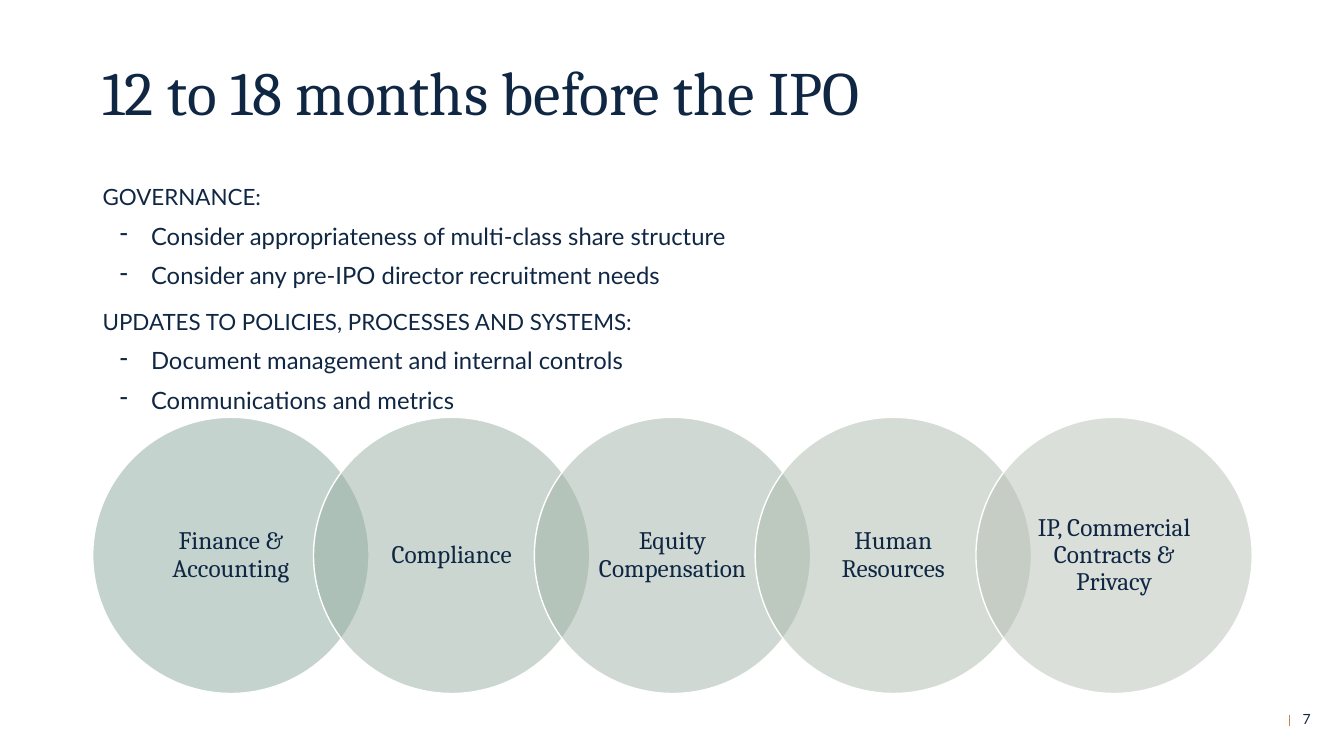
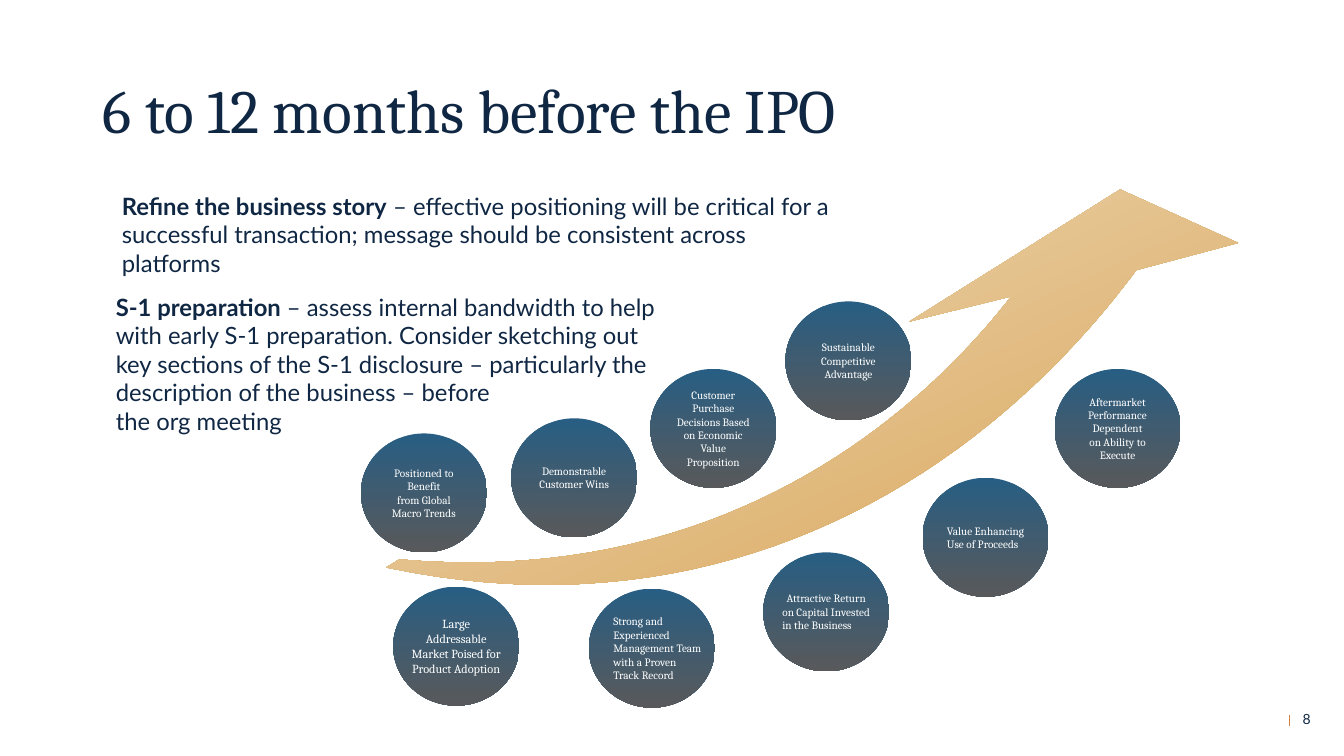
from lxml import etree
from pptx import Presentation
from pptx.dml.color import RGBColor
from pptx.enum.shapes import MSO_CONNECTOR, MSO_SHAPE
from pptx.enum.text import MSO_ANCHOR, PP_ALIGN
from pptx.oxml.ns import qn
from pptx.util import Inches, Pt

LINE = MSO_CONNECTOR.STRAIGHT
OVAL = MSO_SHAPE.OVAL
TOP, MIDDLE = MSO_ANCHOR.TOP, MSO_ANCHOR.MIDDLE
LEFT, CENTER = PP_ALIGN.LEFT, PP_ALIGN.CENTER

SERIF, SANS = "Cambria", "Lato"
NAVY = RGBColor(0x10, 0x27, 0x44)
WHITE = RGBColor(0xFF, 0xFF, 0xFF)
ORANGE = RGBColor(0xD1, 0x83, 0x46)
BLUE = RGBColor(0x28, 0x5E, 0x83)
GRAY = RGBColor(0x58, 0x59, 0x5B)
GOLD = RGBColor(0xD8, 0xA5, 0x58)
SAND = RGBColor(0xEF, 0xDB, 0xBC)
SAGES = [RGBColor(0x8B, 0xA8, 0x9E), RGBColor(0x96, 0xAE, 0xA1),
         RGBColor(0xA1, 0xB3, 0xA6), RGBColor(0xAC, 0xBA, 0xAD),
         RGBColor(0xB7, 0xC0, 0xB6)]

EDGE = 0.92  # left margin of titles and content

AREAS = ["Finance & Accounting", "Compliance", "Equity Compensation",
         "Human Resources", "IP, Commercial Contracts & Privacy"]

TOPICS = [
    ("GOVERNANCE:",
     ["Consider appropriateness of multi-class share structure",
      "Consider any pre-IPO director recruitment needs"]),
    ("UPDATES TO POLICIES, PROCESSES AND SYSTEMS:",
     ["Document management and internal controls",
      "Communications and metrics"]),
]

# left, top, text size, number of leading centred lines, lines
POINTS = [
    (3.58, 4.3, 8, 4,
     ["Positioned to", "Benefit", "from Global", "Macro Trends"]),
    (5.07, 4.15, 8, 2, ["Demonstrable", "Customer Wins"]),
    (6.45, 3.66, 8, 6,
     ["Customer", "Purchase", "Decisions Based", "on Economic", "Value",
      "Proposition"]),
    (7.79, 2.99, 8, 3, ["Sustainable", "Competitive", "Advantage"]),
    (3.9, 5.82, 8.8, 4,
     ["Large", "Addressable", "Market Poised for", "Product Adoption"]),
    (5.84, 5.84, 8, 0,
     ["Strong and", "Experienced", "Management Team", "with a Proven",
      "Track Record"]),
    (7.57, 5.48, 8, 1,
     ["Attractive Return", "on Capital Invested", "in the Business"]),
    (9.15, 4.74, 8, 1, ["Value Enhancing", "Use of Proceeds"]),
    (10.46, 3.66, 8, 5,
     ["Aftermarket", "Performance", "Dependent", "on Ability to", "Execute"]),
]


def style(para, name, size, color, align=LEFT):
    para.font.name = name
    para.font.size = Pt(size)
    para.font.color.rgb = color
    para.alignment = align


def add_box(slide, left, top, width, height, anchor=TOP):
    box = slide.shapes.add_textbox(
        Inches(left), Inches(top), Inches(width), Inches(height))
    frame = box.text_frame
    frame.word_wrap = True
    frame.vertical_anchor = anchor
    return frame


def next_para(frame, first):
    return frame.paragraphs[0] if first else frame.add_paragraph()


def add_base(deck, title, top, number):
    """Start a slide with its title, footer rule and page number."""
    slide = deck.slides.add_slide(deck.slide_layouts[6])
    para = add_box(slide, EDGE, top, 11.5, 1.45, MIDDLE).paragraphs[0]
    para.text = title
    para.line_spacing = 0.9
    style(para, SERIF, 44, NAVY)

    rule = slide.shapes.add_connector(
        LINE, Inches(12.79), Inches(7.09), Inches(12.79), Inches(7.2))
    rule.line.color.rgb = ORANGE
    rule.line.width = Pt(0.5)
    etree.SubElement(rule.element.spPr, qn("a:effectLst"))

    para = add_box(slide, 12.82, 6.93, 0.51, 0.4, MIDDLE).paragraphs[0]
    para.text = str(number)
    style(para, SANS, 10, NAVY)
    return slide


def add_oval(slide, left, top, width, height, side, end):
    """Add an ellipse with the given side and top/bottom insets."""
    oval = slide.shapes.add_shape(
        OVAL, Inches(left), Inches(top), Inches(width), Inches(height))
    oval.shadow.inherit = False
    frame = oval.text_frame
    frame.vertical_anchor = MIDDLE
    frame.margin_left = frame.margin_right = Inches(side)
    frame.margin_top = frame.margin_bottom = Inches(end)
    return oval


def fade(shape, start, stop, angle):
    """Fill with a two-colour gradient and no outline."""
    shape.fill.gradient()
    shape.fill.gradient_angle = angle
    for mark, color in zip(shape.fill.gradient_stops, (start, stop)):
        mark.color.rgb = color
    shape.line.fill.background()


def add_ring(slide, left, color, label):
    """Add a half-transparent circle of the overlapping row."""
    ring = add_oval(slide, left, 4.14, 2.74, 2.74, 0.15, 0.03)
    ring.fill.solid()
    ring.fill.fore_color.rgb = color
    tint = ring.element.spPr.find(qn("a:solidFill"))[0]
    etree.SubElement(tint, qn("a:alpha"), val="50000")
    ring.line.color.rgb = WHITE
    ring.line.width = Pt(1)
    ring.text_frame.word_wrap = True
    para = ring.text_frame.paragraphs[0]
    para.text = label
    para.line_spacing = 0.9
    style(para, SERIF, 18, NAVY, CENTER)


def add_ball(slide, left, top, size, mid, lines):
    """Add a gradient ball; the first mid lines are centred."""
    ball = add_oval(slide, left, top, 1.25, 1.18, 0.06, 0.02)
    fade(ball, BLUE, GRAY, 270)
    frame = ball.text_frame
    frame.word_wrap = False
    for i, line in enumerate(lines):
        para = next_para(frame, i == 0)
        para.text = line
        style(para, SERIF, size, WHITE, CENTER if i < mid else LEFT)


def add_dash(para):
    props = para._p.get_or_add_pPr()
    props.set("marL", str(Inches(0.48)))
    props.set("indent", str(Inches(-0.31)))
    etree.SubElement(props, qn("a:buChar"), char="-")


def add_topics(slide):
    frame = add_box(slide, EDGE, 1.8, 11.5, 2.5)
    for i, (head, items) in enumerate(TOPICS):
        para = next_para(frame, i == 0)
        para.text = head
        para.line_spacing = 0.9
        para.space_before = Pt(15 if i else 0)
        style(para, SANS, 16, NAVY)
        for item in items:
            para = frame.add_paragraph()
            para.text = item
            para.line_spacing = 0.9
            para.space_before = Pt(10)
            add_dash(para)
            style(para, SANS, 17, NAVY)


def add_note(slide, left, top, width, height, lead, *lines):
    """Add a paragraph with a bold lead and broken lines."""
    para = add_box(slide, left, top, width, height).paragraphs[0]
    run = para.add_run()
    run.text = lead
    run.font.bold = True
    for i, line in enumerate(lines):
        if i:
            para.add_line_break()
        para.add_run().text = line
    style(para, SANS, 17, NAVY)


def curve(a, b, c, d, steps=40):
    """Return points on a cubic curve, without its start."""
    spots = []
    for i in range(1, steps + 1):
        t = i / steps
        u = 1 - t
        spots.append(tuple(
            u**3 * p + 3 * u * u * t * q + 3 * u * t * t * r + t**3 * s
            for p, q, r, s in zip(a, b, c, d)))
    return spots


def add_arrow(slide):
    neck = (11.27, 2.68)
    spots = curve(neck, (9.77, 4.7), (7.21, 6.35), (3.83, 5.63))
    spots += [(3.96, 5.55)]
    spots += curve((3.96, 5.55), (7.38, 5.85), (9.3, 3.88), (10.03, 2.94))
    spots += [(9.02, 3.19), (11.11, 1.88), (12.28, 2.41)]
    path = slide.shapes.build_freeform(*neck, scale=Inches(1) / 1000)
    path = slide.shapes.build_freeform(
        Inches(neck[0]), Inches(neck[1]))
    path.add_line_segments(
        [(Inches(x), Inches(y)) for x, y in spots], close=True)
    arrow = path.convert_to_shape()
    arrow.shadow.inherit = False
    fade(arrow, GOLD, SAND, 114.5)


def main():
    deck = Presentation()
    deck.slide_width, deck.slide_height = Inches(13.33), Inches(7.5)

    # Early preparation
    slide = add_base(deck, "12 to 18 months before the IPO", 0.22, 7)
    for i, (color, label) in enumerate(zip(SAGES, AREAS)):
        add_ring(slide, EDGE + 2.19 * i, color, label)
    add_topics(slide)

    # Business story
    slide = add_base(deck, "6 to 12 months before the IPO", 0.4, 8)
    for point in POINTS:
        add_ball(slide, *point)
    add_arrow(slide)
    add_note(slide, 1.11, 1.85, 7.28, 1, "Refine the business story",
             " – effective positioning will be critical for a successful "
             "transaction; message should be consistent across platforms")
    add_note(slide, 1.05, 2.85, 5.7, 1.65, "S-1 preparation ",
             "– assess internal bandwidth to help with early S-1 preparation. "
             "Consider sketching out key sections of the S-1 disclosure – "
             "particularly the description of the business – before",
             "the org meeting")

    deck.save("out.pptx")


if __name__ == "__main__":
    main()
